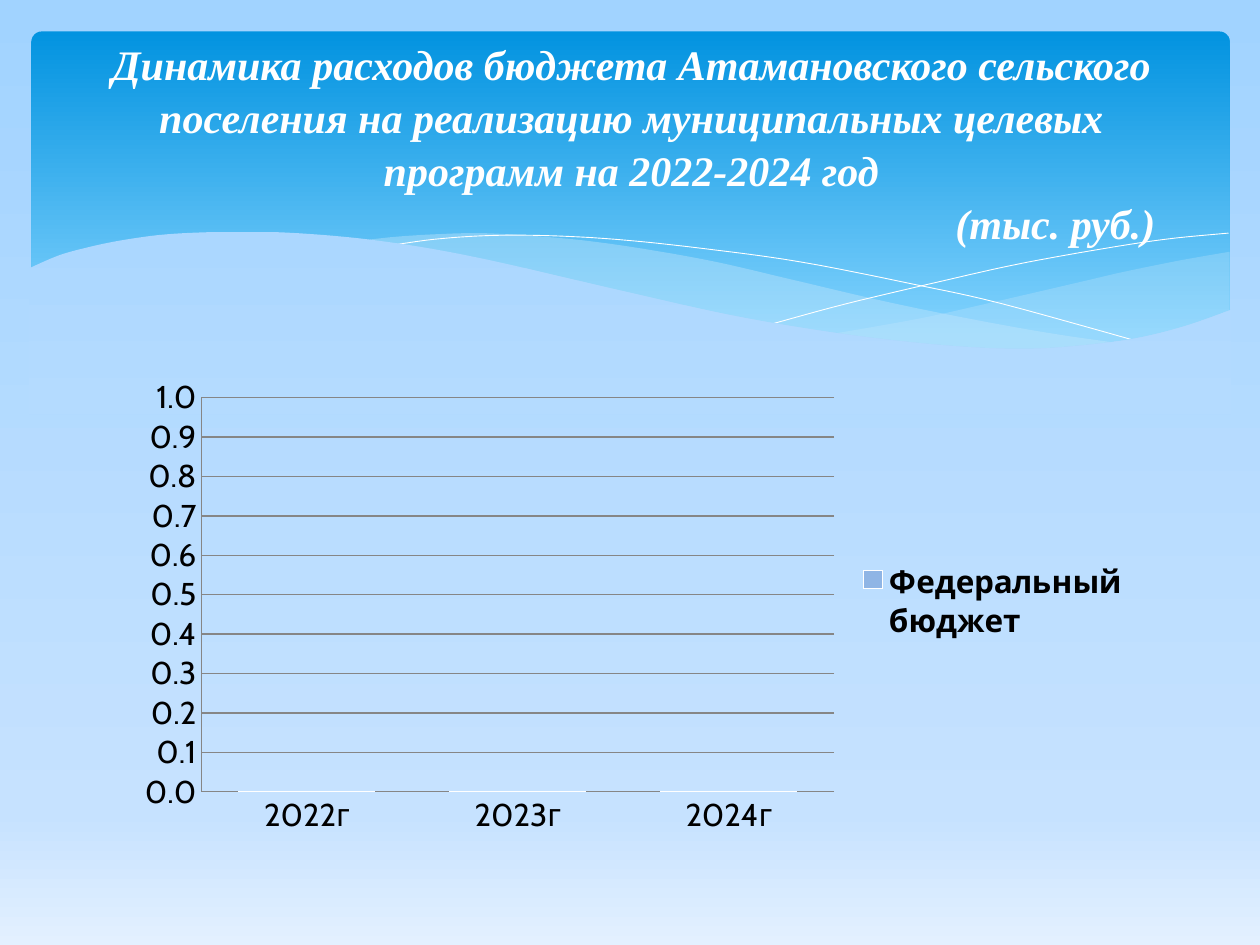
from copy import deepcopy
from dataclasses import dataclass

from lxml.etree import SubElement as Sub
from pptx import Presentation
from pptx.chart.data import CategoryChartData as Data
from pptx.dml.color import RGBColor as Color
from pptx.enum.chart import XL_CHART_TYPE as Kind, XL_LEGEND_POSITION as Place
from pptx.enum.chart import XL_TICK_MARK as Tick
from pptx.enum.shapes import MSO_SHAPE as Form
from pptx.enum.text import MSO_ANCHOR as Anchor, PP_ALIGN as Align
from pptx.oxml.ns import qn
from pptx.util import Inches, Pt

CELL = Inches(0.1)
COLS, ROWS = 100, 75
Points = tuple[tuple[float, float], ...]


@dataclass(frozen=True)
class Theme:
    """Hold the colours, fonts and type sizes."""
    sky: tuple = ((0, "A1D3FF"), (0.86, "C6E2FF"), (1, "E3F0FF"))
    band: tuple = ((0, "0293E0"), (0.9, "83D3FE"))
    fade: tuple = ((0, "ABD7FF"), (1, "B4DBFF"))
    mist: str = "C6E7FC"
    white: str = "FFFFFF"
    ink: str = "000000"
    rule: str = "868686"
    head: str = "Times New Roman"
    body: str = "Cabin"
    big: int = 24
    small: int = 18


@dataclass(frozen=True)
class Wave:
    """Describe an outline made of smooth runs of grid points."""
    runs: tuple[Points, ...]
    alpha: int = 0
    fade: tuple = ()


@dataclass(frozen=True)
class Part:
    """Describe one series of the chart."""
    name: str
    vals: tuple[float, ...]
    hue: str


THEME = Theme()
WAVES = (
    Wave((((97.5, 20), (93.5, 20.7), (89.1, 21.6), (86.1, 22.3), (77.9, 24.2), (72.9, 25.3), (66.1, 26.5)),
          ((66.1, 26.5), (71.9, 27.2), (76.9, 27.7), (81.4, 27.8), (86.3, 27.5), (90.5, 26.9),
           (94.2, 25.9), (97.6, 24.7)),
          ((97.6, 24.7), (97.6, 20))), alpha=29),
    Wave((((89.3, 27.3), (83.7, 26.5), (77.5, 25.4), (70.6, 24), (62.9, 22.2), (56.9, 20.8), (51.4, 19.8),
           (46.5, 19.1), (42, 18.7), (38, 18.5), (34.4, 18.6), (31.3, 18.8), (28.6, 19.1)),
          ((28.6, 19.1), (34.2, 19.9), (40.4, 21.1), (44.9, 22.2), (53, 24), (60.1, 25.5), (66.5, 26.6),
           (72.2, 27.4), (77.3, 27.7), (81.8, 27.8), (85.7, 27.7), (89.3, 27.3))), alpha=40),
    Wave((((30.9, 19.5), (34.4, 19), (38.7, 18.7), (43.3, 18.7), (48.9, 19), (55.6, 19.7), (63.6, 20.8),
           (72.7, 22.6), (79.5, 24.1), (90.7, 27.2)),)),
    Wave((((61.3, 25.7), (67.2, 24.1), (74.8, 22.3), (80.6, 21), (86.6, 19.9), (92.4, 19), (97.5, 18.5)),)),
    Wave((((97.7, 24.6), (94, 25.9), (89.9, 26.9), (85, 27.5), (80.9, 27.7), (76.1, 27.5), (70.8, 27),
           (64.8, 26.2), (57.9, 25), (50.3, 23.3), (44.7, 22), (39.1, 20.7), (34, 19.7), (29.2, 19),
           (25, 18.6), (21.1, 18.4), (17.7, 18.4), (13.2, 18.6), (9.5, 19.1), (6.7, 19.7), (4.6, 20.3),
           (2.3, 21.3)),
          ((2.3, 21.3), (2.3, 32.9)), ((2.3, 32.9), (97.7, 32.9)), ((97.7, 32.9), (97.7, 24.6))),
         fade=THEME.fade),
)
YEARS = ("2022г", "2023г", "2024г")
NONE = (0, 0, 0)
PARTS = (Part("Series 1", NONE, "FFFF99"), Part("Series 2", NONE, "00B0F0"),
         Part("Федеральный бюджет", NONE, "8FB5E5"))


def box(*cells: float) -> list[int]:
    """Turn grid cells into slide lengths."""
    return [round(cell * CELL) for cell in cells]


def shade(fill, root, stops: tuple) -> None:
    """Fill from top to bottom with the given colour stops."""
    fill.gradient()
    fill.gradient_angle = 270
    kids = next(root.iter(qn("a:gsLst")))
    while len(kids) < len(stops):
        kids.append(deepcopy(kids[-1]))
    for stop, (pos, hue) in zip(fill.gradient_stops, stops):
        stop.position = pos
        stop.color.rgb = Color.from_string(hue)


def paint(fill, hue: str) -> None:
    """Fill with one colour."""
    fill.solid()
    fill.fore_color.rgb = Color.from_string(hue)


def style(font, *, face: str, size: int, hue: str, bold: bool = False, slant: bool = False) -> None:
    """Set the looks of a font."""
    font.name, font.size, font.bold, font.italic = face, Pt(size), bold, slant
    font.color.rgb = Color.from_string(hue)


def write(para, text: str, *, align: Align, lead: float, **looks) -> None:
    """Write a paragraph of formatted text."""
    run = para.add_run()
    run.text = text
    para.alignment, para.line_spacing = align, lead
    style(run.font, **looks)


def bend(run: Points, steps: int = 6) -> list[list[int]]:
    """Trace a smooth curve through the points of a run."""
    if len(run) == 2:
        return [box(*spot) for spot in run]
    ring = (run[0], *run, run[-1])
    out = [box(*run[0])]
    for quad in zip(ring, ring[1:], ring[2:], ring[3:]):
        for step in range(1, steps + 1):
            t = step / steps
            out.append(box(*(
                b + t * (c - a) / 2 + t * t * (a - 2.5 * b + 2 * c - d / 2)
                + t ** 3 * (1.5 * (b - c) + (d - a) / 2)
                for a, b, c, d in zip(*quad))))
    return out


def draw(shapes, wave: Wave) -> None:
    """Draw a wave as a filled area or a thin line."""
    spots = [spot for run in wave.runs for spot in bend(run)]
    solid = bool(wave.alpha or wave.fade)
    pen = shapes.build_freeform(*spots[0], scale=1.0)
    pen.add_line_segments(spots[1:], close=solid)
    shape = pen.convert_to_shape()
    shape.shadow.inherit = False
    if not solid:
        shape.fill.background()
        paint(shape.line.fill, THEME.white)
        shape.line.width = Pt(0.5)
        return
    shape.line.fill.background()
    if wave.fade:
        shade(shape.fill, shape.element, wave.fade)
    else:
        paint(shape.fill, THEME.mist)
        tint = next(shape.element.iter(qn("a:srgbClr")))
        Sub(tint, qn("a:alpha"), val=str(wave.alpha * 1000))


def lay(node, spot: int, shares: tuple, inner: bool = False) -> None:
    """Fix the place of a chart part by shares of the chart."""
    for old in node.findall(qn("c:layout")):
        node.remove(old)
    outer = node.makeelement(qn("c:layout"))
    node.insert(spot, outer)
    hold = Sub(outer, qn("c:manualLayout"))
    if inner:
        Sub(hold, qn("c:layoutTarget"), val="inner")
    for key in ("xMode", "yMode"):
        Sub(hold, qn("c:" + key), val="edge")
    for key, share in zip("xywh", shares):
        Sub(hold, qn("c:" + key), val=str(share))


def plot(shapes) -> None:
    """Add the stacked columns with their axes and legend."""
    data = Data(number_format="#,##0.0")
    data.categories = YEARS
    for part in PARTS:
        data.add_series(part.name, part.vals)
    chart = shapes.add_chart(Kind.COLUMN_STACKED, *box(9.5, 29.3, 81, 37.7), data).chart
    looks = {"face": THEME.body, "size": THEME.small, "hue": THEME.ink}
    style(chart.font, **looks)
    chart.has_title = False
    bars = chart.plots[0]
    bars.gap_width, bars.overlap, bars.vary_by_categories = 55, 100, False
    for row, part in zip(bars.series, PARTS):
        paint(row.format.fill, part.hue)
        paint(row.format.line.fill, THEME.white)
    axis = chart.value_axis
    axis.minimum_scale, axis.maximum_scale, axis.major_unit = 0, 1, 0.1
    axis.tick_labels.number_format = "#,##0.0"
    axis.tick_labels.number_format_is_linked = False
    for side in (axis, chart.category_axis):
        side.major_tick_mark = side.minor_tick_mark = Tick.NONE
        paint(side.format.line.fill, THEME.rule)
    paint(axis.major_gridlines.format.line.fill, THEME.rule)
    chart.has_legend = True
    key = chart.legend
    key.position, key.include_in_layout = Place.RIGHT, False
    style(key.font, bold=True, **looks)
    node = next(chart.element.iter(qn("c:legend")))
    for num in (0, 1):
        item = node.makeelement(qn("c:legendEntry"))
        Sub(item, qn("c:idx"), val=str(num))
        Sub(item, qn("c:delete"), val="1")
        node.insert(num + 1, item)
    lay(node, 3, (0.72, 0.4, 0.27, 0.18))
    lay(next(chart.element.iter(qn("c:plotArea"))), 0, (0.08, 0.06, 0.62, 0.83), inner=True)


def main() -> None:
    """Build the slide and save it."""
    deck = Presentation()
    deck.slide_width, deck.slide_height = box(COLS, ROWS)
    slide = deck.slides.add_slide(deck.slide_layouts[5])
    shapes = slide.shapes
    shade(slide.background.fill, slide.element, THEME.sky)
    band = shapes.add_shape(Form.ROUNDED_RECTANGLE, *box(2.5, 2.5, 95.1, 27))
    band.adjustments[0] = 0.03
    band.shadow.inherit = False
    band.line.fill.background()
    shade(band.fill, band.element, THEME.band)
    for wave in WAVES:
        draw(shapes, wave)
    plot(shapes)
    title = shapes.title
    title.left, title.top, title.width, title.height = box(5.1, 3.6, 90, 15.3)
    frame = title.text_frame
    frame.word_wrap, frame.vertical_anchor = True, Anchor.MIDDLE
    frame.margin_left = frame.margin_right = Inches(0.34)
    looks = {"lead": 1.05, "face": THEME.head, "size": THEME.big, "hue": THEME.white,
             "bold": True, "slant": True}
    write(frame.paragraphs[0], "Динамика расходов бюджета Атамановского сельского поселения на реализацию "
          "муниципальных целевых программ на 2022-2024 год", align=Align.CENTER, **looks)
    write(frame.add_paragraph(), "(тыс. руб.)", align=Align.RIGHT, **looks)
    title.element.getparent().append(title.element)
    deck.save("out.pptx")


if __name__ == "__main__":
    main()
